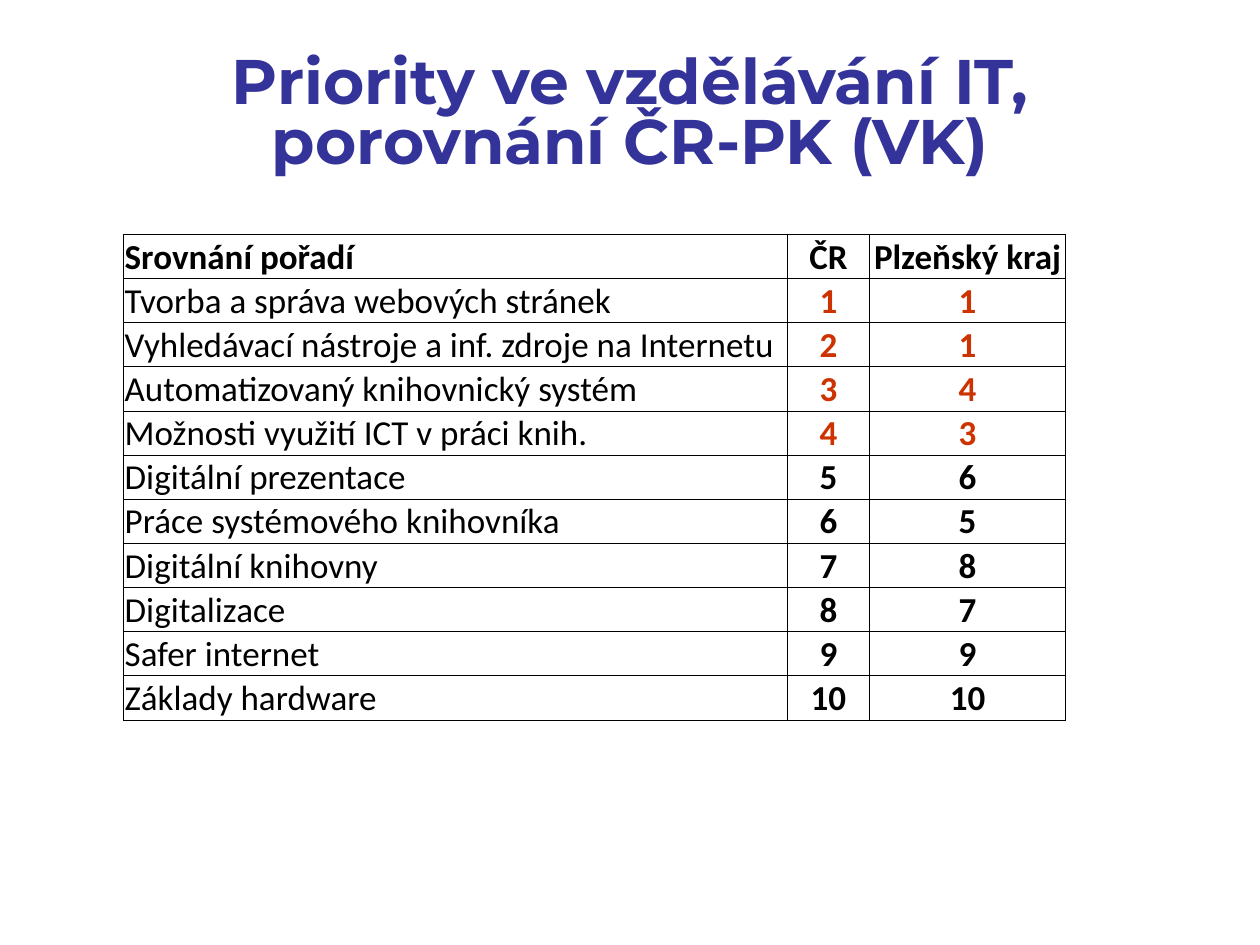
from lxml import etree
from pptx import Presentation
from pptx.dml.color import RGBColor
from pptx.enum.text import MSO_ANCHOR as Anchor, PP_ALIGN as Align
from pptx.oxml.ns import qn
from pptx.util import Inches, Pt

COLORS = {"title": "333399", "text": "000000", "top": "CC3300", "border": "000000"}
HEADER = ("Srovnání pořadí", "ČR", "Plzeňský kraj")
PRIORITIES = [
    ("Tvorba a správa webových stránek", 1, 1),
    ("Vyhledávací nástroje a inf. zdroje na Internetu", 2, 1),
    ("Automatizovaný knihovnický systém", 3, 4),
    ("Možnosti využití ICT v práci knih.", 4, 3),
    ("Digitální prezentace", 5, 6),
    ("Práce systémového knihovníka", 6, 5),
    ("Digitální knihovny", 7, 8),
    ("Digitalizace", 8, 7),
    ("Safer internet", 9, 9),
    ("Základy hardware", 10, 10),
]
COLUMN_WIDTHS = (5.27, 0.65, 1.56)
ROW_HEIGHT = 0.35
TOP_RANKS = 4


def add_run(paragraph, text, font, size, color, bold):
    run = paragraph.add_run()
    run.text = text
    run.font.name = font
    run.font.size = Pt(size)
    run.font.bold = bold
    run.font.color.rgb = RGBColor.from_string(COLORS[color])


def add_title(slide, text):
    title = slide.shapes.title
    title.left, title.top = Inches(0.5), Inches(0.3)
    title.width, title.height = Inches(9), Inches(1.25)
    title.text_frame.vertical_anchor = Anchor.MIDDLE
    title.text_frame.word_wrap = True
    paragraph = title.text_frame.paragraphs[0]
    paragraph.alignment = Align.CENTER
    paragraph.line_spacing = 0.8
    add_run(paragraph, text, "Montserrat", 36, "title", True)


def add_borders(cell):
    properties = cell._tc.get_or_add_tcPr()
    for position, side in enumerate(("a:lnL", "a:lnR", "a:lnT", "a:lnB")):
        line = etree.Element(qn(side), w=str(Pt(0.5)))
        fill = etree.SubElement(line, qn("a:solidFill"))
        etree.SubElement(fill, qn("a:srgbClr"), val=COLORS["border"])
        properties.insert(position, line)


def fill_cell(cell, text, alignment, color, bold):
    cell.margin_left = cell.margin_right = cell.margin_top = Inches(0.01)
    cell.margin_bottom = 0
    cell.vertical_anchor = Anchor.BOTTOM
    cell.fill.background()
    add_borders(cell)
    paragraph = cell.text_frame.paragraphs[0]
    paragraph.alignment = alignment
    add_run(paragraph, text, "Calibri", 20, color, bold)


def add_ranking(slide):
    rows = [HEADER, *PRIORITIES]
    table = slide.shapes.add_table(
        len(rows), len(HEADER), Inches(0.98), Inches(1.86),
        Inches(sum(COLUMN_WIDTHS)), Inches(ROW_HEIGHT * len(rows)),
    ).table
    table.horz_banding = False
    for column, width in zip(table.columns, COLUMN_WIDTHS):
        column.width = Inches(width)
    for row_index, values in enumerate(rows):
        table.rows[row_index].height = Inches(ROW_HEIGHT)
        for column_index, value in enumerate(values):
            is_rank = column_index > 0
            is_top = is_rank and 0 < row_index <= TOP_RANKS
            fill_cell(
                table.cell(row_index, column_index),
                str(value),
                Align.CENTER if is_rank else Align.LEFT,
                "top" if is_top else "text",
                is_rank or row_index == 0,
            )


def main():
    presentation = Presentation()
    presentation.slide_width, presentation.slide_height = Inches(10), Inches(7.5)
    slide = presentation.slides.add_slide(presentation.slide_layouts[5])
    add_title(slide, "Priority ve vzdělávání IT, porovnání ČR-PK (VK)")
    add_ranking(slide)
    presentation.save("out.pptx")


if __name__ == "__main__":
    main()
